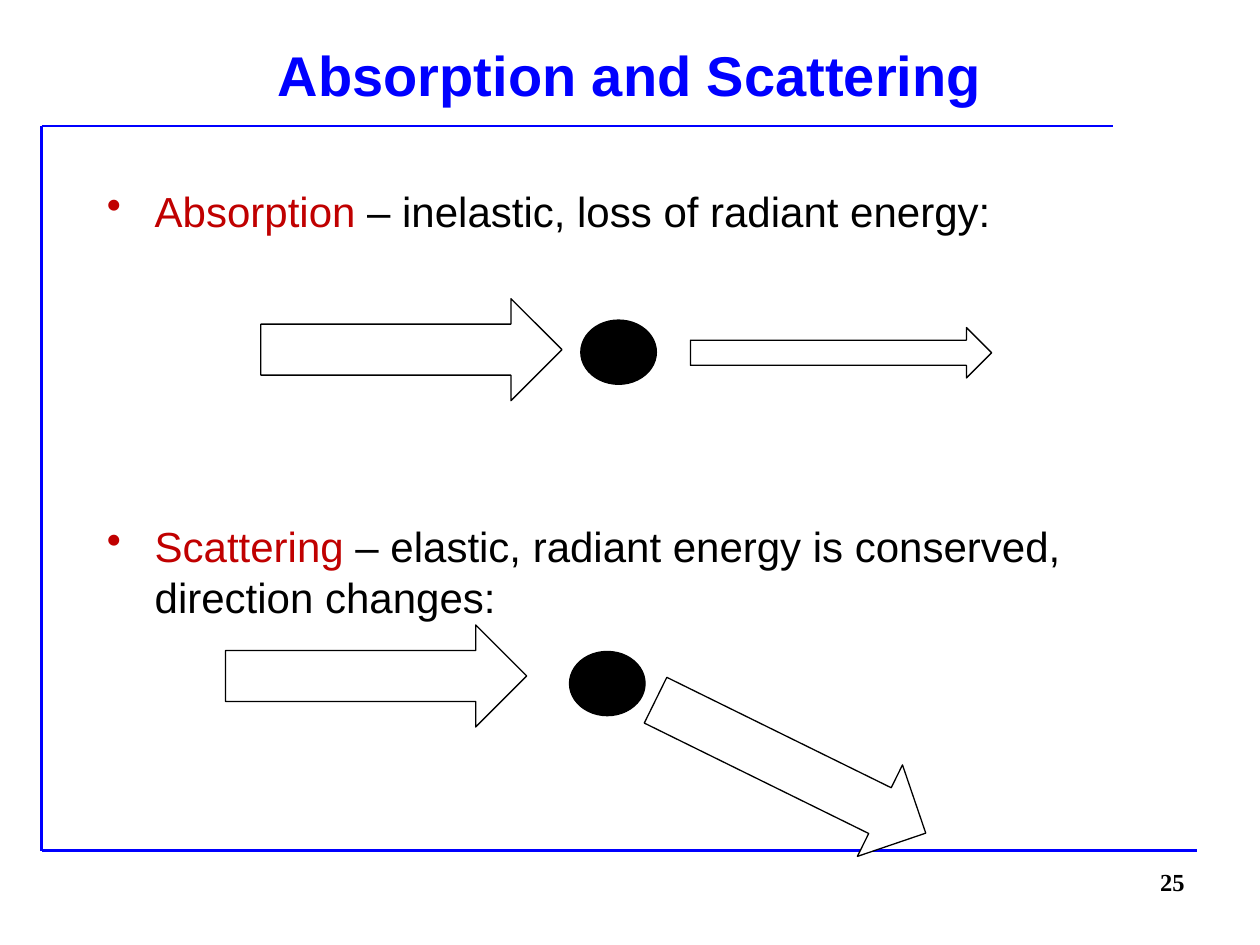
from dataclasses import dataclass

from lxml.etree import SubElement
from pptx import Presentation
from pptx.dml.color import RGBColor
from pptx.enum.shapes import MSO_CONNECTOR as Link, MSO_SHAPE as Kind
from pptx.enum.text import MSO_ANCHOR as Anchor, PP_ALIGN as Align
from pptx.oxml.ns import qn
from pptx.slide import Slide
from pptx.text.text import TextFrame
from pptx.util import Inches, Pt

BLUE = RGBColor(0x00, 0x00, 0xFF)
RED = RGBColor(0xC0, 0x00, 0x00)
BLACK = RGBColor(0x00, 0x00, 0x00)
WHITE = RGBColor(0xFF, 0xFF, 0xFF)


@dataclass(frozen=True)
class Rule:
    x1: float
    y1: float
    x2: float
    y2: float


@dataclass(frozen=True)
class Beam:
    left: float
    top: float
    height: float = 0.81
    turn: float = 0


@dataclass(frozen=True)
class Dot:
    left: float
    top: float


@dataclass(frozen=True)
class Point:
    term: str
    text: str
    gap: float


LEFT, TOP, BASE = 0.33, 1, 6.75
RULES = [
    Rule(LEFT, TOP, 8.83, TOP),
    Rule(LEFT, BASE, 9.5, BASE),
    Rule(LEFT, TOP, LEFT, BASE),
]
POINTS = [
    Point("Absorption", " – inelastic, loss of radiant energy:", 3),
    Point("Scattering", " – elastic, radiant energy is conserved, direction changes:", 163),
]
DOTS = [Dot(4.61, 2.54), Dot(4.52, 5.17)]
BEAMS = [
    Beam(2.07, 2.37),
    Beam(5.48, 2.6, height=0.4),
    Beam(1.79, 4.96),
    Beam(5.08, 5.68, turn=26.2),
]


def add_rule(slide: Slide, rule: Rule) -> None:
    ends = (Inches(v) for v in (rule.x1, rule.y1, rule.x2, rule.y2))
    line = slide.shapes.add_connector(Link.STRAIGHT, *ends)
    line.line.color.rgb = BLUE
    line.line.width = Pt(1.5)
    SubElement(line._element.spPr, qn("a:effectLst"))


def add_frame(slide: Slide, left: float, top: float, width: float, height: float) -> TextFrame:
    box = slide.shapes.add_textbox(Inches(left), Inches(top), Inches(width), Inches(height))
    box.text_frame.word_wrap = True
    return box.text_frame


def add_label(frame: TextFrame, text: str, font: str, size: float, color: RGBColor, align: Align) -> None:
    para = frame.paragraphs[0]
    para.text = text
    para.alignment = align
    para.font.name = font
    para.font.size = Pt(size)
    para.font.bold = True
    para.font.color.rgb = color


def add_points(frame: TextFrame, points: list[Point]) -> None:
    for i, point in enumerate(points):
        para = frame.add_paragraph() if i else frame.paragraphs[0]
        para.space_before = Pt(point.gap)
        para.font.name = "Arial"
        para.font.size = Pt(24)
        for text, color in ((point.term, RED), (point.text, BLACK)):
            run = para.add_run()
            run.text = text
            run.font.color.rgb = color
        props = para._p.get_or_add_pPr()
        props.set("marL", str(Inches(0.38)))
        props.set("indent", str(Inches(-0.38)))
        bullet = SubElement(props, qn("a:buChar"), char="•")
        props.remove(bullet)
        props.find(qn("a:defRPr")).addprevious(bullet)


def add_form(slide: Slide, kind: Kind, item: Dot | Beam, width: float, height: float, fill: RGBColor):
    form = slide.shapes.add_shape(
        kind, Inches(item.left), Inches(item.top), Inches(width), Inches(height)
    )
    form.shadow.inherit = False
    form.fill.solid()
    form.fill.fore_color.rgb = fill
    form.line.color.rgb = BLACK
    form.line.width = Pt(0.75)
    return form


def main() -> None:
    """Build the slide on absorption and scattering."""
    deck = Presentation()
    deck.slide_width, deck.slide_height = Inches(10), Inches(7.5)
    slide = deck.slides.add_slide(deck.slide_layouts[6])

    for rule in RULES:
        add_rule(slide, rule)

    title = add_frame(slide, 0.75, 0, 8.5, 1.17)
    title.vertical_anchor = Anchor.MIDDLE
    add_label(title, "Absorption and Scattering", "Arial", 32, BLUE, Align.CENTER)
    add_points(add_frame(slide, 0.75, 1.42, 8.5, 5.17), POINTS)
    page = add_frame(slide, 8.83, 6.83, 0.67, 0.5)
    add_label(page, "25", "Times New Roman", 14, BLACK, Align.RIGHT)

    for dot in DOTS:
        add_form(slide, Kind.OVAL, dot, 0.6, 0.51, BLACK)
    for beam in BEAMS:
        arrow = add_form(slide, Kind.RIGHT_ARROW, beam, 2.39, beam.height, WHITE)
        arrow.rotation = beam.turn

    deck.save("out.pptx")


if __name__ == "__main__":
    main()
